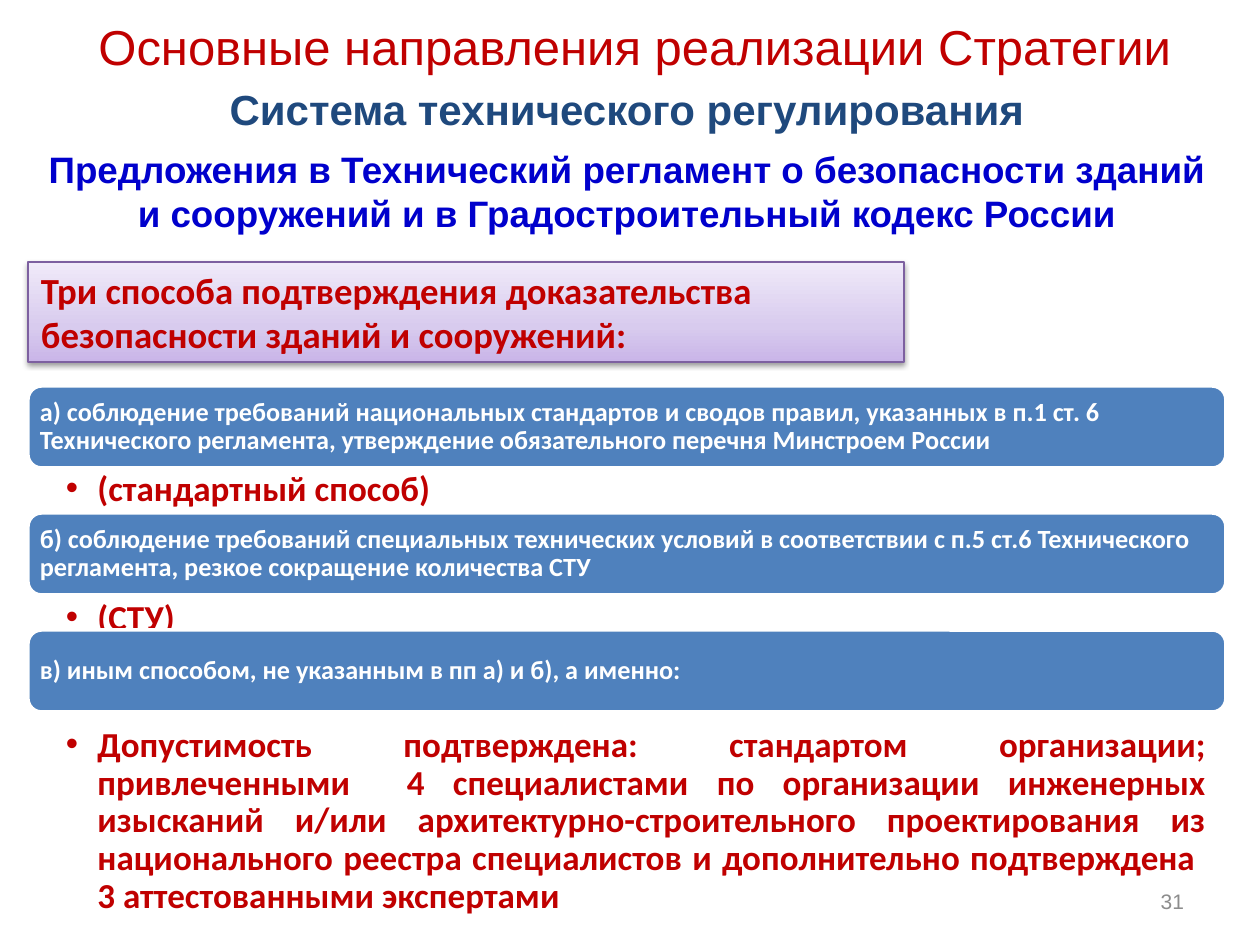
from dataclasses import dataclass

from lxml.etree import SubElement
from pptx import Presentation
from pptx.dml.color import RGBColor
from pptx.enum.shapes import MSO_SHAPE
from pptx.enum.text import MSO_ANCHOR, PP_ALIGN
from pptx.oxml.ns import qn
from pptx.shapes.autoshape import Shape
from pptx.slide import Slide
from pptx.util import Emu, Pt

PX_PER_INCH = 126

RED = RGBColor(0xC0, 0x00, 0x00)
NAVY = RGBColor(0x1F, 0x49, 0x7D)
BRIGHT_BLUE = RGBColor(0x00, 0x00, 0xCC)
BAR_BLUE = RGBColor(0x4F, 0x81, 0xBD)
PURPLE = RGBColor(0x7D, 0x60, 0xA0)
GRAY = RGBColor(0x8C, 0x8C, 0x8C)
WHITE = RGBColor(0xFF, 0xFF, 0xFF)
BLACK = RGBColor(0x00, 0x00, 0x00)
LILAC_STOPS = (
    (0, RGBColor(0xC9, 0xB5, 0xE8)),
    (35, RGBColor(0xD8, 0xCB, 0xEE)),
    (100, RGBColor(0xF0, 0xEA, 0xF9)),
)

LEFT, WIDTH = 28, 1198
BAR_HEIGHT = 82


@dataclass(frozen=True)
class Box:
    left: int
    top: int
    width: int
    height: int


@dataclass(frozen=True)
class Style:
    size: int
    color: RGBColor
    font: str = "Calibri"
    bold: bool = True
    align: PP_ALIGN = PP_ALIGN.LEFT
    anchor: MSO_ANCHOR = MSO_ANCHOR.MIDDLE
    insets: tuple[int, int, int, int] = (13, 6, 13, 6)
    line_spacing: float = 1.0
    bullet: bool = False


@dataclass(frozen=True)
class Heading:
    text: str
    box: Box
    style: Style


@dataclass(frozen=True)
class Method:
    """A way of proving safety: a bar and the bulleted note below it."""
    rule: str
    bar_top: int
    note: str
    note_top: int
    note_height: int = 47
    note_align: PP_ALIGN = PP_ALIGN.LEFT


HEADINGS = (
    Heading(
        "Предложения в Технический регламент о безопасности зданий "
        "и сооружений и в Градостроительный кодекс России",
        Box(LEFT, 141, WIDTH, 100),
        Style(21, BRIGHT_BLUE, "Arial", align=PP_ALIGN.CENTER),
    ),
    Heading(
        "Система технического регулирования",
        Box(LEFT, 76, WIDTH, 66),
        Style(24, NAVY, "Arial", align=PP_ALIGN.CENTER),
    ),
    Heading(
        "Основные направления реализации Стратегии",
        Box(LEFT, 0, 1213, 92),
        Style(28, RED, "Arial", bold=False, align=PP_ALIGN.CENTER),
    ),
    Heading(
        "31",
        Box(903, 876, 294, 50),
        Style(12, GRAY, "Arial", bold=False, align=PP_ALIGN.RIGHT),
    ),
)

METHODS = (
    Method(
        "а) соблюдение требований национальных стандартов и сводов правил, "
        "указанных в п.1 ст. 6 Технического регламента, утверждение "
        "обязательного перечня Минстроем России",
        386, "(стандартный способ)", 467,
    ),
    Method(
        "б) соблюдение требований специальных технических условий в "
        "соответствии с п.5 ст.6 Технического регламента, резкое сокращение "
        "количества СТУ",
        513, "(СТУ)", 596,
    ),
    Method(
        "в) иным способом, не указанным в пп а) и б), а именно:",
        630,
        "Допустимость подтверждена: стандартом организации; привлеченными  "
        "4 специалистами по организации инженерных изысканий и/или "
        "архитектурно-строительного проектирования из национального реестра "
        "специалистов и дополнительно подтверждена  3 аттестованными экспертами",
        723, 202, PP_ALIGN.JUSTIFY,
    ),
)


def px(length: int) -> Emu:
    return Emu(round(length * 914400 / PX_PER_INCH))


def place(box: Box) -> tuple[Emu, Emu, Emu, Emu]:
    return px(box.left), px(box.top), px(box.width), px(box.height)


def write(shape: Shape, text: str, style: Style) -> None:
    frame = shape.text_frame
    frame.word_wrap = True
    frame.vertical_anchor = style.anchor
    (frame.margin_left, frame.margin_top,
     frame.margin_right, frame.margin_bottom) = map(px, style.insets)
    paragraph = frame.paragraphs[0]
    paragraph.alignment = style.align
    paragraph.line_spacing = style.line_spacing
    if style.bullet:
        paragraph.level = 1
        properties = paragraph._p.get_or_add_pPr()
        properties.set("marL", "228600")
        properties.set("indent", "-228600")
        SubElement(properties, qn("a:buFont"), typeface="Arial")
        SubElement(properties, qn("a:buChar"), char="•")
    run = paragraph.add_run()
    run.text = text
    run.font.name = style.font
    run.font.size = Pt(style.size)
    run.font.bold = style.bold
    run.font.color.rgb = style.color


def add_text(slide: Slide, text: str, box: Box, style: Style) -> None:
    write(slide.shapes.add_textbox(*place(box)), text, style)


def add_panel(slide: Slide, kind: MSO_SHAPE, box: Box,
              line_color: RGBColor, line_width: float) -> Shape:
    panel = slide.shapes.add_shape(kind, *place(box))
    panel.shadow.inherit = False
    panel.line.color.rgb = line_color
    panel.line.width = Pt(line_width)
    return panel


def fill_lilac(panel: Shape) -> None:
    panel.fill.gradient()
    panel.fill.gradient_angle = 90
    stops = panel._element.spPr.find(qn("a:gradFill")).find(qn("a:gsLst"))
    for stop in list(stops):
        stops.remove(stop)
    for percent, color in LILAC_STOPS:
        stop = SubElement(stops, qn("a:gs"), pos=str(percent * 1000))
        SubElement(stop, qn("a:srgbClr"), val=str(color))


def drop_shadow(panel: Shape) -> None:
    effects = panel._element.spPr.find(qn("a:effectLst"))
    shadow = SubElement(effects, qn("a:outerShdw"), blurRad=str(Pt(3.1)),
                        dist=str(Pt(1.6)), dir="5400000", rotWithShape="0")
    color = SubElement(shadow, qn("a:srgbClr"), val=str(BLACK))
    SubElement(color, qn("a:alpha"), val="38000")


def add_method(slide: Slide, method: Method) -> None:
    bar = add_panel(slide, MSO_SHAPE.ROUNDED_RECTANGLE,
                    Box(LEFT, method.bar_top, WIDTH, BAR_HEIGHT), WHITE, 2)
    bar.fill.solid()
    bar.fill.fore_color.rgb = BAR_BLUE
    write(bar, method.rule, Style(15, WHITE, insets=(8, 8, 8, 8), line_spacing=0.9))
    add_text(slide, method.note,
             Box(LEFT, method.note_top, WIDTH, method.note_height),
             Style(20, RED, align=method.note_align, anchor=MSO_ANCHOR.TOP,
                   insets=(38, 4, 20, 4), line_spacing=0.9, bullet=True))


def main() -> None:
    deck = Presentation()
    deck.slide_width, deck.slide_height = px(1260), px(945)
    slide = deck.slides.add_slide(deck.slide_layouts[6])

    intro = add_panel(slide, MSO_SHAPE.RECTANGLE, Box(LEFT, 262, 876, 100), PURPLE, 0.75)
    fill_lilac(intro)
    drop_shadow(intro)
    write(intro, "Три способа подтверждения доказательства безопасности "
                 "зданий и сооружений:", Style(21, RED))
    for method in METHODS:
        add_method(slide, method)
    for heading in HEADINGS:
        add_text(slide, heading.text, heading.box, heading.style)

    deck.save("out.pptx")


if __name__ == "__main__":
    main()
